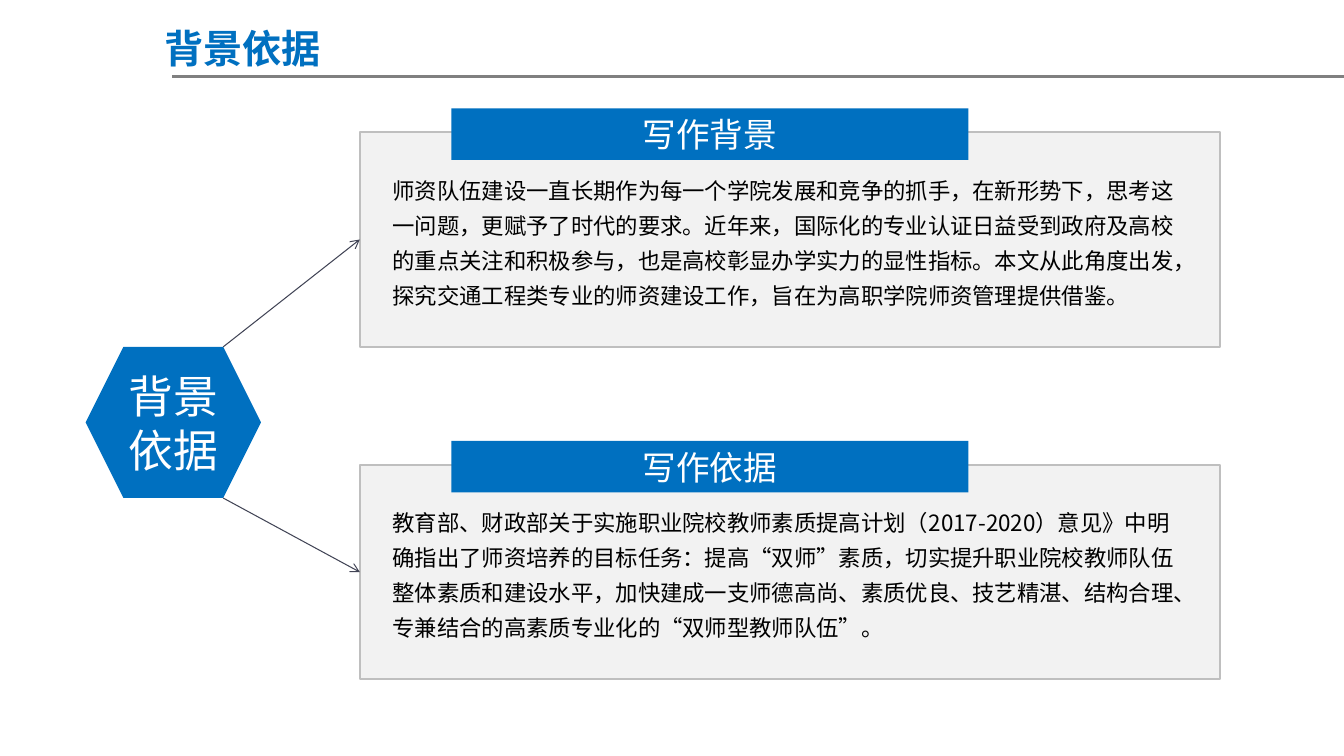
from dataclasses import dataclass

from lxml import etree
from pptx import Presentation
from pptx.dml.color import RGBColor
from pptx.enum.shapes import MSO_CONNECTOR, MSO_SHAPE
from pptx.enum.text import MSO_ANCHOR, MSO_AUTO_SIZE, PP_ALIGN
from pptx.oxml.ns import qn
from pptx.util import Cm, Pt

RECTANGLE, HEXAGON = MSO_SHAPE.RECTANGLE, MSO_SHAPE.HEXAGON
STRAIGHT = MSO_CONNECTOR.STRAIGHT
TOP, MIDDLE = MSO_ANCHOR.TOP, MSO_ANCHOR.MIDDLE
LEFT, CENTER = PP_ALIGN.LEFT, PP_ALIGN.CENTER
NO_AUTOFIT = MSO_AUTO_SIZE.NONE
LEFT_SIDE = 1

FONT = "Noto Sans CJK SC"
COLORS = {
    "blue": "0070C0",
    "panel": "F2F2F2",
    "border": "BFBFBF",
    "rule": "808080",
    "arrow": "414455",
    "white": "FFFFFF",
    "black": "000000",
}
SLIDE_WIDTH, SLIDE_HEIGHT = 33.88, 19.05
HEXAGON_LEFT, HEXAGON_TOP = 2.16, 8.74
HEXAGON_WIDTH, HEXAGON_HEIGHT = 4.42, 3.81
HEXAGON_CORNER_X = HEXAGON_LEFT + HEXAGON_WIDTH - HEXAGON_HEIGHT / 4


@dataclass
class Section:
    heading: str
    body: str
    top: float
    body_height: float
    arrow_start_y: float


SECTIONS = [
    Section(
        "写作背景",
        "师资队伍建设一直长期作为每一个学院发展和竞争的抓手，在新形势下，思考这一问题，"
        "更赋予了时代的要求。近年来，国际化的专业认证日益受到政府及高校的重点关注和积极参与，"
        "也是高校彰显办学实力的显性指标。本文从此角度出发，探究交通工程类专业的师资建设工作，"
        "旨在为高职学院师资管理提供借鉴。",
        3.33, 4.7, HEXAGON_TOP,
    ),
    Section(
        "写作依据",
        "教育部、财政部关于实施职业院校教师素质提高计划（2017-2020）意见》中明确指出了"
        "师资培养的目标任务：提高“双师”素质，切实提升职业院校教师队伍整体素质和建设水平，"
        "加快建成一支师德高尚、素质优良、技艺精湛、结构合理、专兼结合的高素质专业化的"
        "“双师型教师队伍”。",
        11.71, 3.81, HEXAGON_TOP + HEXAGON_HEIGHT,
    ),
]


def color(name: str) -> RGBColor:
    return RGBColor.from_string(COLORS[name])


def write(shape, text: str, size: float, color_name: str, align=CENTER,
          anchor=MIDDLE, bold: bool = False, spacing: float = 1.0) -> None:
    frame = shape.text_frame
    frame.text = text
    frame.word_wrap = True
    frame.auto_size = NO_AUTOFIT
    frame.vertical_anchor = anchor
    para = frame.paragraphs[0]
    para.alignment = align
    para.line_spacing = spacing
    font = para.font
    font.size = Pt(size)
    font.bold = bold
    font.color.rgb = color(color_name)
    font.name = FONT
    latin = para._p.pPr.find(qn("a:defRPr")).find(qn("a:latin"))
    east_asian = etree.Element(qn("a:ea"), typeface=FONT)
    latin.addnext(east_asian)


def add_block(slide, kind, left: float, top: float, width: float,
              height: float, fill: str, border: str = ""):
    shape = slide.shapes.add_shape(kind, Cm(left), Cm(top), Cm(width), Cm(height))
    shape.shadow.inherit = False
    shape.fill.solid()
    shape.fill.fore_color.rgb = color(fill)
    if border:
        shape.line.color.rgb = color(border)
        shape.line.width = Pt(1.5)
    else:
        shape.line.fill.background()
    return shape


def add_line(slide, x1: float, y1: float, x2: float, y2: float,
             color_name: str, width: float):
    line = slide.shapes.add_connector(STRAIGHT, Cm(x1), Cm(y1), Cm(x2), Cm(y2))
    line.line.color.rgb = color(color_name)
    line.line.width = Pt(width)
    etree.SubElement(line._element.spPr, qn("a:effectLst"))
    return line


def add_section(slide, section: Section) -> None:
    panel = add_block(slide, RECTANGLE, 9.07, section.top, 21.69, 5.41, "panel", "border")
    heading = add_block(slide, RECTANGLE, 11.38, section.top - 0.6, 13.03, 1.3, "blue")
    write(heading, section.heading, 24, "white")
    body = slide.shapes.add_textbox(
        Cm(9.65), Cm(section.top + 0.8), Cm(20.27), Cm(section.body_height))
    write(body, section.body, 16, "black", LEFT, TOP, spacing=1.3)
    arrow = add_line(slide, HEXAGON_CORNER_X, section.arrow_start_y,
                     9.07, section.top + 2.7, "arrow", 0.75)
    arrow.end_connect(panel, LEFT_SIDE)
    etree.SubElement(arrow.line._get_or_add_ln(), qn("a:tailEnd"), type="arrow")


def add_title(slide, text: str) -> None:
    title = slide.shapes.title
    title.left, title.top = Cm(1.55), Cm(0.48)
    title.width, title.height = Cm(9.14), Cm(1.45)
    write(title, text, 28, "blue", bold=True)
    frame = title.text_frame
    frame.margin_left = frame.margin_right = 0
    frame.margin_top = frame.margin_bottom = 0


def main() -> None:
    deck = Presentation()
    deck.slide_width, deck.slide_height = Cm(SLIDE_WIDTH), Cm(SLIDE_HEIGHT)
    slide = deck.slides.add_slide(deck.slide_layouts[5])
    add_title(slide, "背景依据")
    add_line(slide, 4.34, 1.93, SLIDE_WIDTH, 1.93, "rule", 2)
    hexagon = add_block(slide, HEXAGON, HEXAGON_LEFT, HEXAGON_TOP,
                        HEXAGON_WIDTH, HEXAGON_HEIGHT, "blue")
    write(hexagon, "背景依据", 32, "white")
    for section in SECTIONS:
        add_section(slide, section)
    deck.save("out.pptx")


if __name__ == "__main__":
    main()
